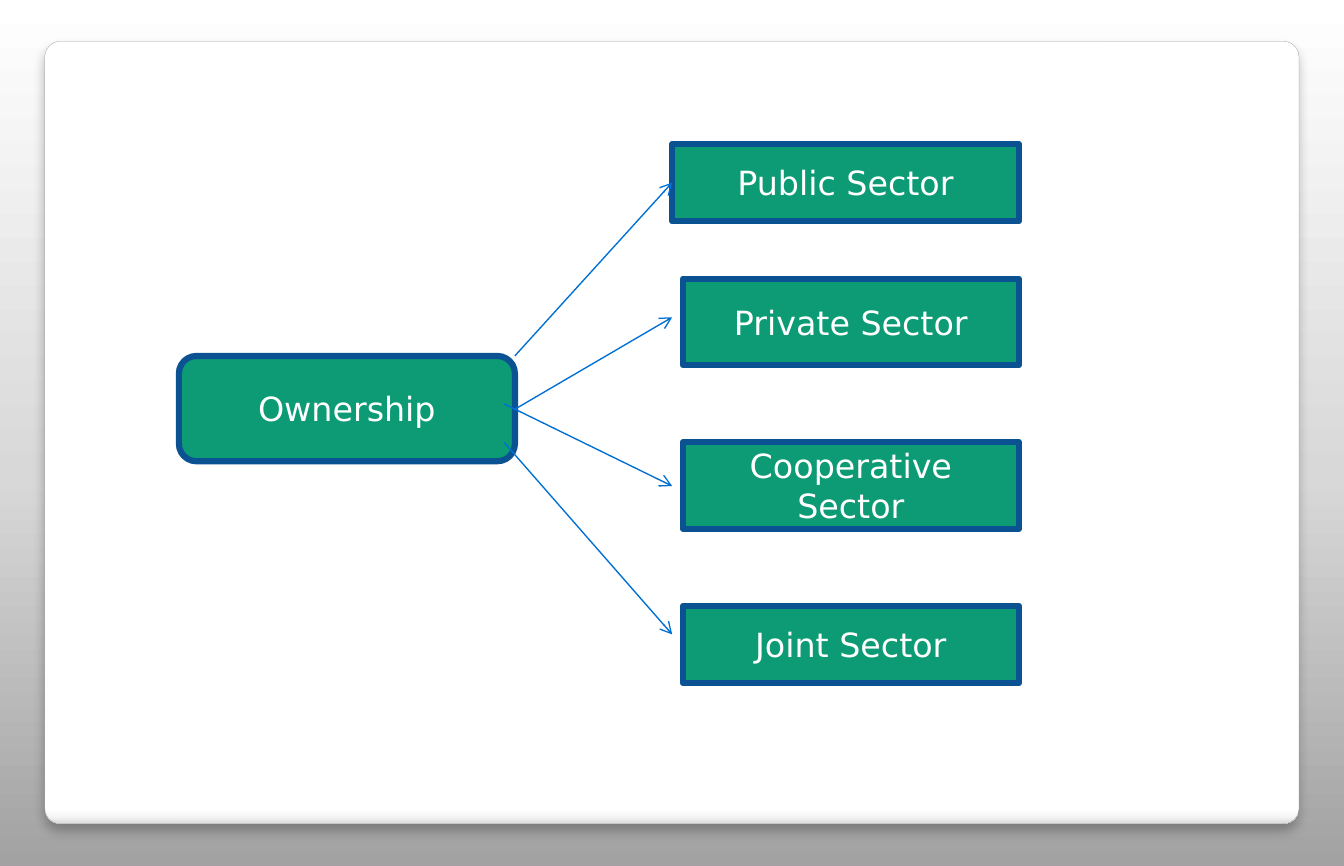
from lxml.etree import SubElement
from pptx import Presentation
from pptx.dml.color import RGBColor
from pptx.enum.shapes import MSO_CONNECTOR, MSO_SHAPE
from pptx.enum.text import MSO_ANCHOR, PP_ALIGN
from pptx.oxml.ns import qn
from pptx.util import Pt

WHITE = RGBColor(0xFF, 0xFF, 0xFF)
GREEN = RGBColor(0x0C, 0x9B, 0x74)
NAVY = RGBColor(0x0B, 0x52, 0x92)
BLUE = RGBColor(0x00, 0x70, 0xD5)
BLACK = RGBColor(0x00, 0x00, 0x00)
PANEL_EDGE = RGBColor(0xA4, 0xA4, 0xA4)
BACKDROP_STOPS = [(0, RGBColor(0xA2, 0xA2, 0xA2)),
                  (45, RGBColor(0xD8, 0xD8, 0xD8)), (100, WHITE)]
PANEL_STOPS = [(0, WHITE), (98, WHITE), (99, RGBColor(0xF7, 0xF7, 0xF7)),
               (100, RGBColor(0xDA, 0xDA, 0xDA))]
FONT = "DejaVu Sans"

# name, top, width, height, arrow start (from the owner's top right), arrow end (from top)
SECTORS = [
    ("Public Sector", 0, 187.2, 41.76, (0, 0), 20.88),
    ("Private Sector", 72.72, 181.44, 46.8, (0, 28.8), 20.88),
    ("Cooperative Sector", 161, 181.44, 46.8, (-5.76, 25.92), 23.76),
    ("Joint Sector", 249.5, 181.44, 41.76, (-5.76, 46.8), 15.4),
]


def fill_gradient(fill, owner, stops, angle):
    """Fill with any number of stops; the angle runs counter-clockwise."""
    fill.gradient()
    fill.gradient_angle = angle
    stop_list = next(owner.iter(qn("a:gsLst")))
    for stop in list(stop_list):
        stop_list.remove(stop)
    for position, color in stops:
        stop = SubElement(stop_list, qn("a:gs"), pos=str(position * 1000))
        SubElement(stop, qn("a:srgbClr"), val=str(color))


def add_backdrop(slide):
    fill_gradient(slide.background.fill, slide.element, BACKDROP_STOPS, 90)


def add_panel(slide, left, top, width, height):
    panel = slide.shapes.add_shape(MSO_SHAPE.ROUNDED_RECTANGLE, Pt(left),
                                   Pt(top), Pt(width), Pt(height))
    panel.adjustments[0] = 0.02
    fill_gradient(panel.fill, panel.element, PANEL_STOPS, 270)
    panel.line.color.rgb = PANEL_EDGE
    panel.line.width = Pt(0.16)
    panel.shadow.inherit = False
    effects = next(panel.element.iter(qn("a:effectLst")))
    shadow = SubElement(effects, qn("a:outerShdw"), blurRad=str(Pt(6)),
                        dist=str(Pt(4)), dir="5400000", rotWithShape="0")
    shade = SubElement(shadow, qn("a:srgbClr"), val=str(BLACK))
    SubElement(shade, qn("a:alpha"), val="25000")


def add_box(slide, outline, text, left, top, width, height):
    box = slide.shapes.add_shape(outline, Pt(left), Pt(top), Pt(width), Pt(height))
    box.shadow.inherit = False
    box.fill.solid()
    box.fill.fore_color.rgb = GREEN
    box.line.color.rgb = NAVY
    box.line.width = Pt(3.35)
    box.text_frame.word_wrap = True
    box.text_frame.vertical_anchor = MSO_ANCHOR.MIDDLE
    paragraph = box.text_frame.paragraphs[0]
    paragraph.alignment = PP_ALIGN.CENTER
    run = paragraph.add_run()
    run.text = text
    run.font.name = FONT
    run.font.size = Pt(18)
    run.font.color.rgb = WHITE


def add_arrow(slide, start_x, start_y, end_x, end_y):
    arrow = slide.shapes.add_connector(MSO_CONNECTOR.STRAIGHT, Pt(start_x),
                                       Pt(start_y), Pt(end_x), Pt(end_y))
    arrow.line.color.rgb = BLUE
    arrow.line.width = Pt(0.75)
    properties = arrow.element.spPr
    SubElement(properties.find(qn("a:ln")), qn("a:tailEnd"), type="arrow")
    SubElement(properties, qn("a:effectLst"))


def add_ownership_diagram(slide, left, top, width):
    owner_top, owner_width = top + 114.48, 181.44
    add_box(slide, MSO_SHAPE.FLOWCHART_ALTERNATE_PROCESS, "Ownership",
            left, owner_top, owner_width, 56.88)
    right = left + width
    for name, offset, sector_width, height, _, _ in SECTORS:
        add_box(slide, MSO_SHAPE.RECTANGLE, name, right - sector_width,
                top + offset, sector_width, height)
    arrow_end = right - max(sector[2] for sector in SECTORS)
    for _, offset, _, _, (start_x, start_y), end_y in SECTORS:
        add_arrow(slide, left + owner_width + start_x, owner_top + start_y,
                  arrow_end, top + offset + end_y)


def main():
    presentation = Presentation()
    presentation.slide_width = Pt(725.75)
    presentation.slide_height = Pt(467.75)
    slide = presentation.slides.add_slide(presentation.slide_layouts[6])
    add_backdrop(slide)
    add_panel(slide, 24.2, 22.32, 677.3, 422.64)
    add_ownership_diagram(slide, 96.6, 77.76, 453.6)
    presentation.save("out.pptx")


if __name__ == "__main__":
    main()
